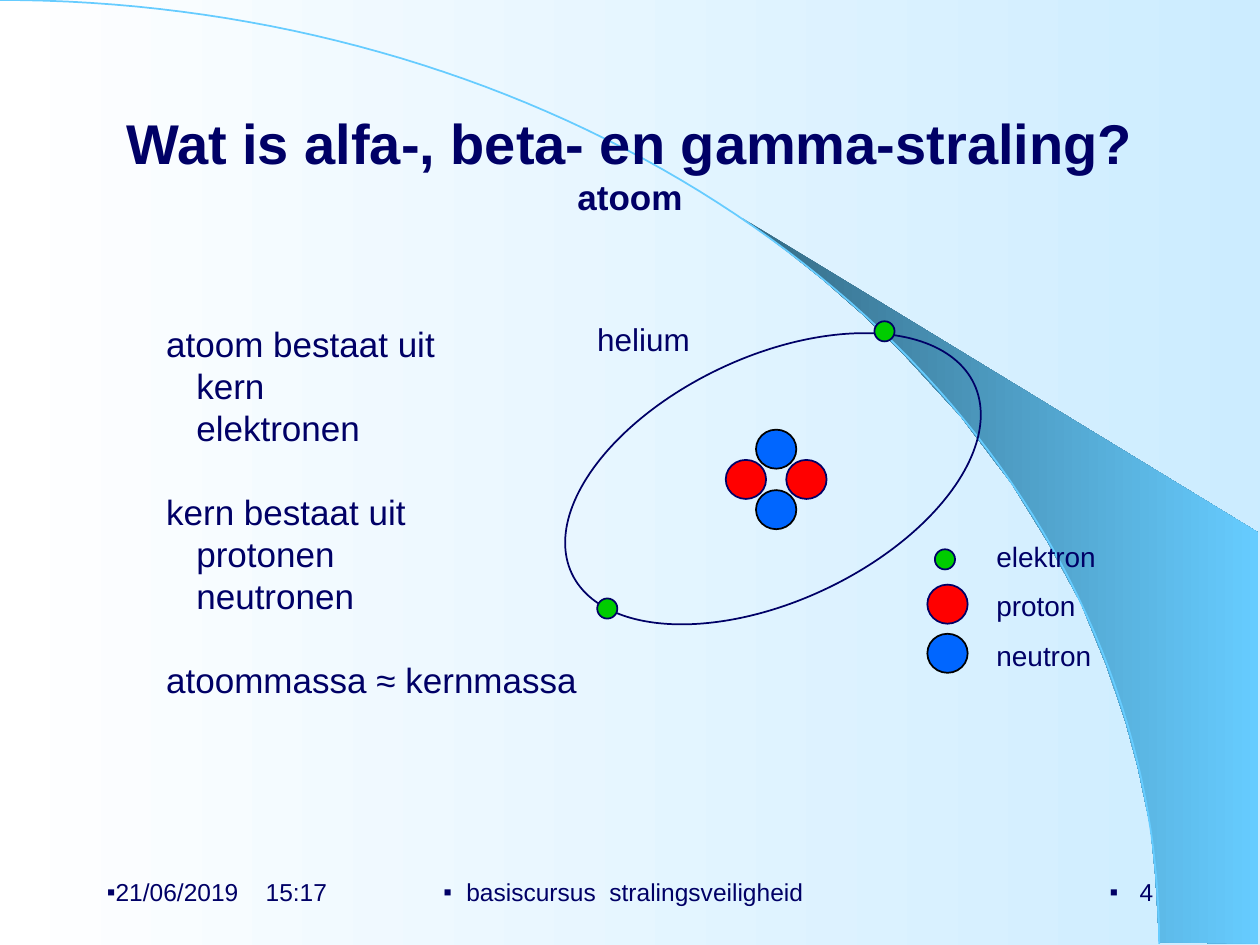
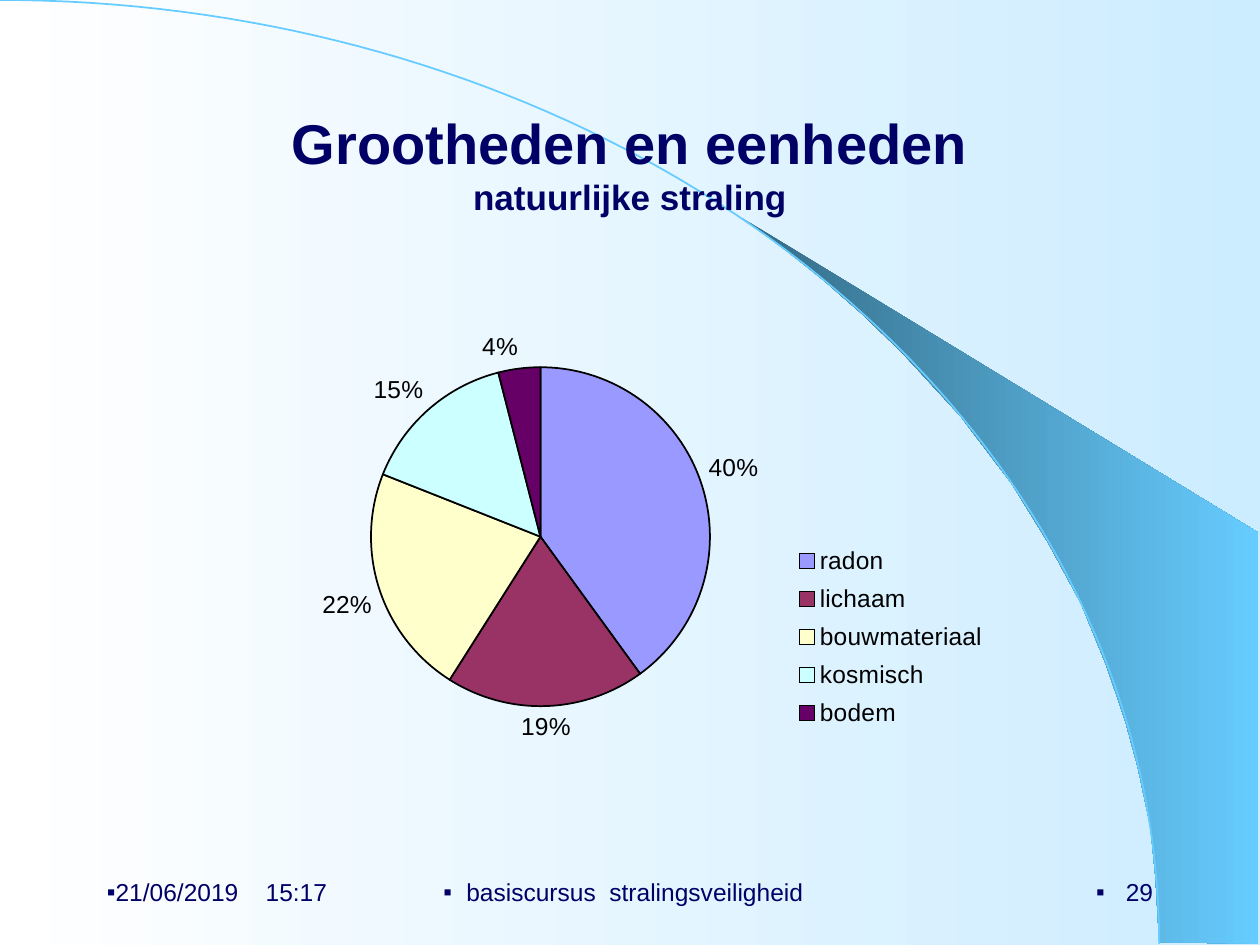
import math

import lxml.etree
import pptx
import pptx.chart.data
import pptx.dml.color
import pptx.enum.chart
import pptx.enum.shapes
import pptx.enum.text
import pptx.oxml.ns
import pptx.util

Inches = pptx.util.Inches
Pt = pptx.util.Pt
ALIGN = pptx.enum.text.PP_ALIGN
MIDDLE = pptx.enum.text.MSO_ANCHOR.MIDDLE

FONT = "Arial"
COLORS = {
    "navy": "000066",
    "black": "000000",
    "white": "FFFFFF",
    "pale blue": "CCECFF",
    "sky": "66CCFF",
    "deep sky": "346A84",
    "electron": "00CC00",
    "proton": "FF0000",
    "neutron": "0066FF",
    "radon": "9999FF",
    "lichaam": "993366",
    "bouwmateriaal": "FFFFCC",
    "kosmisch": "CCFFFF",
    "bodem": "660066",
}
BAND_OUTLINE = [
    (9.2, 7.48), (9.99, 7.49), (9.99, 4.23), (5.89, 1.73), (6.24, 1.99), (6.53, 2.22),
    (6.85, 2.5), (7.16, 2.8), (7.62, 3.3), (8.03, 3.84), (8.32, 4.31), (8.58, 4.79),
    (8.78, 5.28), (8.93, 5.72), (9.03, 6.09), (9.13, 6.56), (9.17, 6.96),
]
ARC_WIDTH, ARC_HEIGHT, ARC_STEPS = 9.2, 7.49, 80
PARTICLE_SIZES = {"electron": (0.16, 0.16), "proton": (0.32, 0.31), "neutron": (0.32, 0.31)}
BODY_GROUPS = [
    ("atoom bestaat uit", ["kern", "elektronen"]),
    ("kern bestaat uit", ["protonen", "neutronen"]),
    ("atoommassa ≈ kernmassa", []),
]
RADIATION_SHARES = {"radon": 40, "lichaam": 19, "bouwmateriaal": 22, "kosmisch": 15, "bodem": 4}


def rgb(name):
    return pptx.dml.color.RGBColor.from_string(COLORS[name])


def style_font(font, size, color="navy", bold=False):
    font.name = FONT
    font.size = Pt(size)
    font.bold = bold
    font.color.rgb = rgb(color)


def set_gradient(fill, start, end):
    fill.gradient()
    fill.gradient_angle = 0
    for stop, color in zip(fill.gradient_stops, (start, end)):
        stop.color.rgb = rgb(color)


def set_line(line, color):
    line.color.rgb = rgb(color)
    line.width = Pt(1)


def add_run(paragraph, text, size, bold=False):
    run = paragraph.add_run()
    run.text = text
    style_font(run.font, size, bold=bold)


def add_text_box(slide, left, top, width, height, wrap=True):
    box = slide.shapes.add_textbox(Inches(left), Inches(top), Inches(width), Inches(height))
    box.text_frame.word_wrap = wrap
    return box.text_frame


def add_outline(slide, points, close):
    corners = [(Inches(x), Inches(y)) for x, y in points]
    builder = slide.shapes.build_freeform(*corners[0])
    builder.add_line_segments(corners[1:], close=close)
    shape = builder.convert_to_shape()
    shape.shadow.inherit = False
    return shape


def add_backdrop(slide):
    """Background, the swooping band and the thin quarter ellipse beside it."""
    set_gradient(slide.background.fill, "white", "pale blue")
    band = add_outline(slide, BAND_OUTLINE, close=True)
    set_gradient(band.fill, "deep sky", "sky")
    band.line.fill.background()

    angles = [step * math.pi / 2 / ARC_STEPS for step in range(ARC_STEPS + 1)]
    points = [(ARC_WIDTH * math.sin(a), ARC_HEIGHT * (1 - math.cos(a))) for a in angles]
    arc = add_outline(slide, points, close=False)
    arc.fill.background()
    set_line(arc.line, "sky")


def add_square_bullet(paragraph, tab=None):
    """Give the paragraph a bullet, and a tab stop at the given inches."""
    qn = pptx.oxml.ns.qn
    properties = paragraph._p.get_or_add_pPr()
    lxml.etree.SubElement(properties, qn("a:buFont"), typeface=FONT)
    lxml.etree.SubElement(properties, qn("a:buChar"), char="▪")
    if tab:
        tabs = lxml.etree.SubElement(properties, qn("a:tabLst"))
        lxml.etree.SubElement(tabs, qn("a:tab"), pos=str(Inches(tab)), algn="l")


def add_footer(slide, number):
    fields = [
        (0.75, 2.08, "21/06/2019\t15:17", ALIGN.LEFT, 1.26),
        (3.42, 3.17, "basiscursus  stralingsveiligheid", ALIGN.CENTER, None),
        (7.17, 2.08, str(number), ALIGN.RIGHT, None),
    ]
    for left, width, text, alignment, tab in fields:
        frame = add_text_box(slide, left, 6.83, width, 0.5)
        frame.vertical_anchor = MIDDLE
        paragraph = frame.paragraphs[0]
        paragraph.alignment = alignment
        add_square_bullet(paragraph, tab)
        add_run(paragraph, text, 14)


def add_title(slide, title, subtitle):
    frame = add_text_box(slide, 0.75, 0.67, 8.5, 1.25)
    frame.vertical_anchor = MIDDLE
    paragraph = frame.paragraphs[0]
    paragraph.alignment = ALIGN.CENTER
    add_run(paragraph, title, 32, bold=True)
    paragraph.add_line_break()
    add_run(paragraph, subtitle, 20, bold=True)


def add_slide(presentation, title, subtitle, number):
    slide = presentation.slides.add_slide(presentation.slide_layouts[6])
    add_backdrop(slide)
    add_footer(slide, number)
    add_title(slide, title, subtitle)
    return slide


def add_body(slide):
    frame = add_text_box(slide, 0.75, 2.18, 5.55, 4.5)
    frame.margin_top = Inches(0.38)
    paragraph = frame.paragraphs[0]
    for index, (heading, parts) in enumerate(BODY_GROUPS):
        if index:
            paragraph = frame.add_paragraph()
            paragraph.space_before = Pt(24)
        add_body_line(paragraph, heading, 0.47)
        for part in parts:
            add_body_line(frame.add_paragraph(), part, 0.71)


def add_body_line(paragraph, text, indent):
    paragraph._p.get_or_add_pPr().set("marL", str(Inches(indent)))
    paragraph.line_spacing = Pt(24)
    add_run(paragraph, text, 20)


def add_ellipse(slide, left, top, width, height, line="navy"):
    ellipse = slide.shapes.add_shape(
        pptx.enum.shapes.MSO_SHAPE.OVAL,
        Inches(left), Inches(top), Inches(width), Inches(height))
    ellipse.shadow.inherit = False
    ellipse.fill.background()
    set_line(ellipse.line, line)
    return ellipse


def add_particle(slide, kind, left, top):
    line = "black" if kind == "neutron" else "navy"
    particle = add_ellipse(slide, left, top, *PARTICLE_SIZES[kind], line=line)
    particle.fill.solid()
    particle.fill.fore_color.rgb = rgb(kind)


def add_label(slide, text, left, top, width, height, size):
    frame = add_text_box(slide, left, top, width, height, wrap=False)
    add_run(frame.paragraphs[0], text, size)


def add_helium_atom(slide):
    orbit = add_ellipse(slide, 4.37, 2.83, 3.53, 1.94)
    orbit.rotation = -25.2
    for left, top in [(6.94, 2.55), (4.74, 4.75)]:
        add_particle(slide, "electron", left, top)
    nucleus_left, nucleus_top, offset = 6.0, 3.65, 0.24
    for sign in (1, -1):
        add_particle(slide, "proton", nucleus_left + sign * offset, nucleus_top)
    for sign in (1, -1):
        add_particle(slide, "neutron", nucleus_left, nucleus_top + sign * offset)
    add_label(slide, "helium", 4.64, 2.49, 0.94, 0.4, 18)


def add_particle_key(slide):
    rows = [
        ("electron", "elektron", 7.42, 4.36, 0.99),
        ("proton", "proton", 7.36, 4.64, 0.83),
        ("neutron", "neutron", 7.36, 5.03, 0.95),
    ]
    for index, (kind, name, left, top, width) in enumerate(rows):
        add_particle(slide, kind, left, top)
        add_label(slide, name, 7.81, 4.23 + index * 0.395, width, 0.37, 16)


def set_manual_layout(parent, position, x, y, width, height, inner=False):
    """Insert a chart layout, in fractions of the chart, at a child position."""
    qn = pptx.oxml.ns.qn
    for old in parent.findall(qn("c:layout")):
        parent.remove(old)
    layout = lxml.etree.Element(qn("c:layout"))
    manual = lxml.etree.SubElement(layout, qn("c:manualLayout"))
    settings = [("xMode", "edge"), ("yMode", "edge"),
                ("x", x), ("y", y), ("w", width), ("h", height)]
    if inner:
        settings.insert(0, ("layoutTarget", "inner"))
    for tag, value in settings:
        lxml.etree.SubElement(manual, qn("c:" + tag), val=str(value))
    parent.insert(position, layout)


def add_radiation_pie(slide):
    data = pptx.chart.data.CategoryChartData()
    data.categories = list(RADIATION_SHARES)
    data.add_series("Series 1", list(RADIATION_SHARES.values()))
    chart = slide.shapes.add_chart(
        pptx.enum.chart.XL_CHART_TYPE.PIE,
        Inches(2.32), Inches(2.49), Inches(5.76), Inches(3.54), data).chart
    chart.has_title = False
    style_font(chart.font, 10.2, "black")

    chart.has_legend = True
    chart.legend.position = pptx.enum.chart.XL_LEGEND_POSITION.RIGHT
    chart.legend.include_in_layout = False
    style_font(chart.legend.font, 14, "black")
    set_manual_layout(chart.legend._element, 1, 0.68, 0.5, 0.29, 0.45)

    plot = chart.plots[0]
    plot.vary_by_categories = True
    set_manual_layout(plot._element.getparent(), 0, 0.076, 0.12, 0.532, 0.76, inner=True)
    for index, name in enumerate(RADIATION_SHARES):
        slice_format = plot.series[0].points[index].format
        slice_format.fill.solid()
        slice_format.fill.fore_color.rgb = rgb(name)
        set_line(slice_format.line, "black")

    plot.has_data_labels = True
    labels = plot.data_labels
    labels.show_percentage = True
    labels.show_value = False
    labels.number_format = "0%"
    labels.number_format_is_linked = False
    labels.position = pptx.enum.chart.XL_LABEL_POSITION.OUTSIDE_END
    style_font(labels.font, 14, "black")


def main():
    presentation = pptx.Presentation()
    presentation.slide_width = Inches(10)
    presentation.slide_height = Inches(7.5)

    atom = add_slide(presentation, "Wat is alfa-, beta- en gamma-straling?", "atoom", 4)
    add_body(atom)
    add_helium_atom(atom)
    add_particle_key(atom)

    radiation = add_slide(presentation, "Grootheden en eenheden", "natuurlijke straling", 29)
    add_radiation_pie(radiation)

    presentation.save("out.pptx")


if __name__ == "__main__":
    main()
